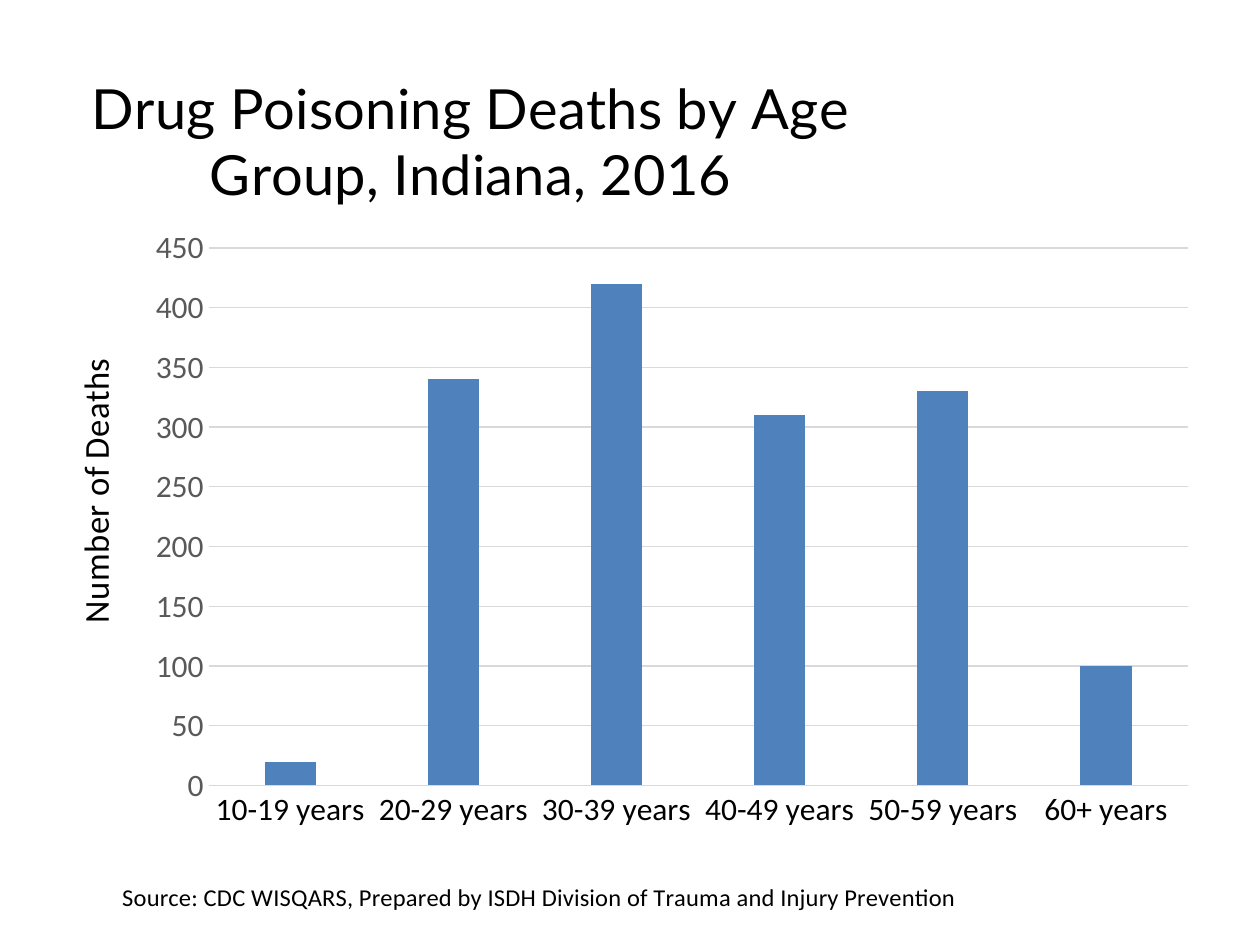
from typing import NamedTuple

from pptx import Presentation
from pptx.chart.data import CategoryChartData
from pptx.dml.color import RGBColor
from pptx.enum.chart import XL_CHART_TYPE, XL_TICK_MARK
from pptx.oxml import parse_xml
from pptx.oxml.ns import nsdecls, qn
from pptx.util import Inches, Pt

COLUMN = XL_CHART_TYPE.COLUMN_CLUSTERED
NO_TICK = XL_TICK_MARK.NONE
COLORS = {"text": "000000", "scale": "595959", "grid": "D9D9D9", "bar": "4F81BD"}
BODY, HEAD = "Calibri", "Lato"

DEATHS = {
    "10-19 years": 20,
    "20-29 years": 340,
    "30-39 years": 420,
    "40-49 years": 310,
    "50-59 years": 330,
    "60+ years": 100,
}


class Label(NamedTuple):
    text: str
    size: int
    face: str
    left: float  # percent of the chart
    top: float
    turn: int = 0  # degrees


TITLE = Label("Drug Poisoning Deaths by Age Group, Indiana, 2016", 32, HEAD, 3, 4)
SOURCE = Label(
    "Source: CDC WISQARS, Prepared by ISDH Division of Trauma and Injury Prevention",
    14, BODY, 6.1, 96.2)
COUNT = Label("Number of Deaths", 20, BODY, 1.5, 37.5, -90)


def color(name: str) -> RGBColor:
    return RGBColor.from_string(COLORS[name])


def style(font, size: int, name: str, face: str = BODY) -> None:
    font.size, font.name, font.bold = Pt(size), face, False
    font.color.rgb = color(name)


def place(part, inner: bool = False, **box: float) -> None:
    """Set a manual layout, with the box in percent of the chart."""
    for old in part.findall(qn("c:layout")):
        part.remove(old)
    tags = '<c:layoutTarget val="inner"/>' if inner else ""
    tags += "".join(f'<c:{k}Mode val="edge"/>' for k in "xy")
    tags += "".join(f'<c:{k} val="{v / 100:.4f}"/>' for k, v in box.items())
    layout = parse_xml(
        f'<c:layout {nsdecls("c")}><c:manualLayout>{tags}</c:manualLayout></c:layout>')
    text = part.find(qn("c:tx"))
    part.insert(0 if text is None else part.index(text) + 1, layout)


def write(title, label: Label) -> None:
    frame = title.text_frame
    frame.text = label.text
    style(frame.paragraphs[0].font, label.size, "text", label.face)
    frame._txBody.bodyPr.set("rot", str(label.turn * 60000))
    place(title._element, x=label.left, y=label.top)


def rule(line) -> None:
    line.color.rgb, line.width = color("grid"), Pt(0.75)


def dress(axis, label: Label, name: str) -> None:
    axis.major_tick_mark = axis.minor_tick_mark = NO_TICK
    style(axis.tick_labels.font, 18, name)
    write(axis.axis_title, label)


def main() -> None:
    deck = Presentation()
    deck.slide_width, deck.slide_height = Inches(10), Inches(7.5)
    wide, high = deck.slide_width, deck.slide_height
    slide = deck.slides.add_slide(deck.slide_layouts[6])

    # Chart and its data
    data = CategoryChartData()
    data.categories = list(DEATHS)
    data.add_series("Series 1", list(DEATHS.values()))
    frame = slide.shapes.add_chart(
        COLUMN, int(wide * 0.037), int(high * 0.024),
        int(wide * 0.925), int(high * 0.95), data)
    chart = frame.chart
    style(chart.font, 10, "text")
    chart.has_legend = False
    chart.has_title = True
    write(chart.chart_title, TITLE)
    place(chart._chartSpace.chart.plotArea, inner=True, x=13.9, y=25.4, w=84, h=60.6)

    # Bars
    plot = chart.plots[0]
    plot.gap_width, plot.overlap, plot.vary_by_categories = 219, -27, False
    fill = plot.series[0].format.fill
    fill.solid()
    fill.fore_color.rgb = color("bar")

    # Axes
    ages, scale = chart.category_axis, chart.value_axis
    dress(ages, SOURCE, "text")
    rule(ages.format.line)
    dress(scale, COUNT, "scale")
    scale.format.line.fill.background()
    scale.minimum_scale, scale.maximum_scale, scale.major_unit = 0, 450, 50
    scale.has_major_gridlines = True
    rule(scale.major_gridlines.format.line)

    deck.save("out.pptx")


if __name__ == "__main__":
    main()
